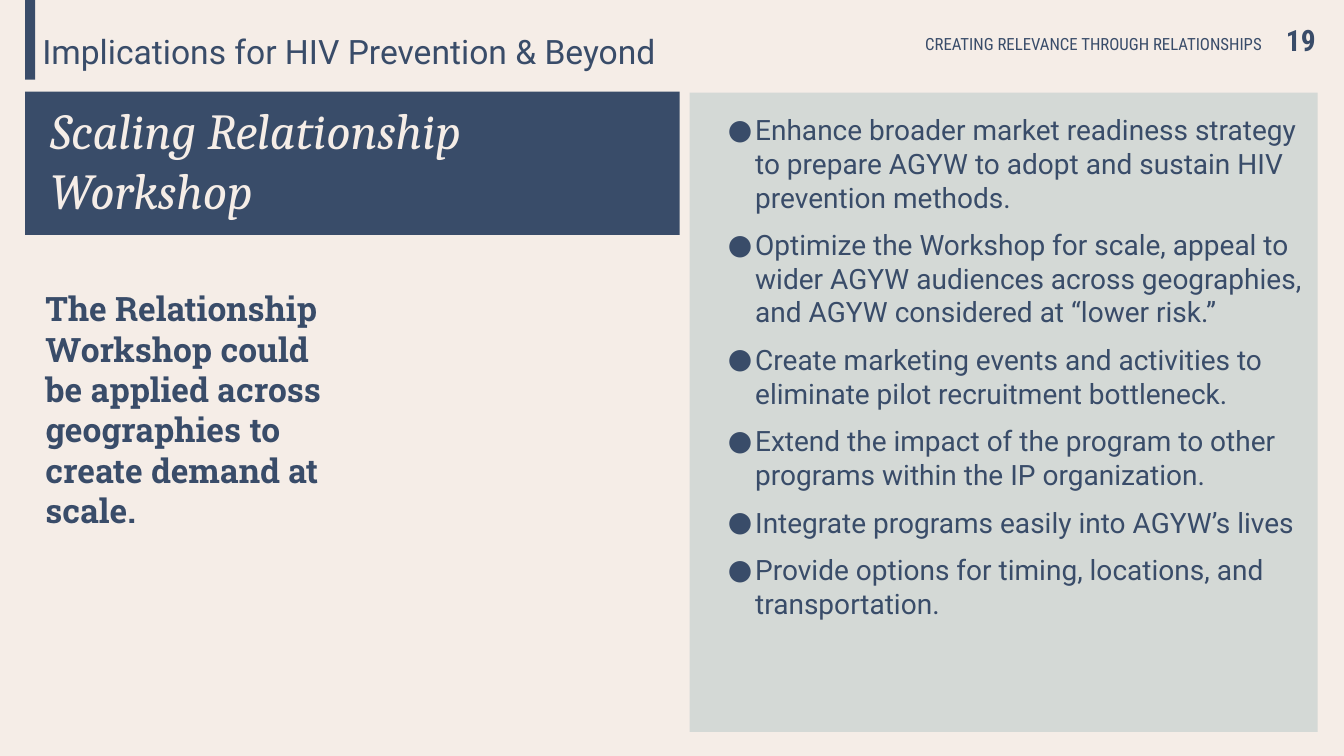
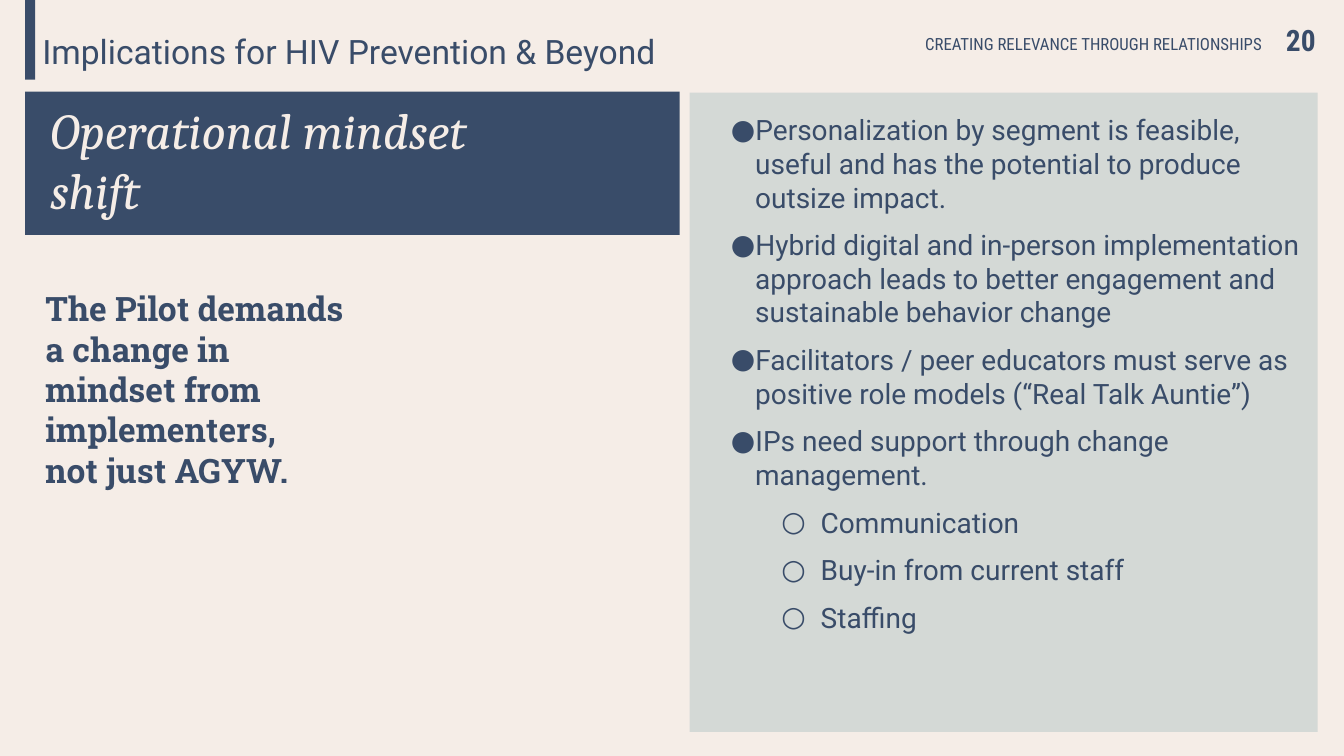
from dataclasses import dataclass

from lxml import etree
from pptx import Presentation
from pptx.dml.color import RGBColor
from pptx.enum import shapes, text
from pptx.oxml import ns
from pptx.util import Inches, Pt


@dataclass(frozen=True)
class Theme:
    navy: RGBColor = RGBColor.from_string("394C69")
    cream: RGBColor = RGBColor.from_string("F5EDE7")
    sage: RGBColor = RGBColor.from_string("D4D9D6")
    sans: str = "Roboto"
    narrow: str = "Roboto Condensed"
    slab: str = "Roboto Slab"
    serif: str = "Cambria"
    title: int = 36
    lead: int = 24
    body: int = 20
    page: int = 21
    label: int = 12
    gap: int = 10


T = Theme()
SECTION = "Implications for HIV Prevention & Beyond"
LABEL = "CREATING RELEVANCE THROUGH RELATIONSHIPS"

# Each bullet is a (level, text) pair; hang is the first-level bullet offset
SLIDES = [
    dict(
        page=19,
        title="Scaling Relationship Workshop",
        lead=["The Relationship Workshop could be applied across "
              "geographies to create demand at scale."],
        hang=0.27,
        points=[
            (0, "Enhance broader market readiness strategy to prepare AGYW "
                "to adopt and sustain HIV prevention methods."),
            (0, "Optimize the Workshop for scale, appeal to wider AGYW "
                "audiences across geographies, and AGYW considered at "
                "“lower risk.”"),
            (0, "Create marketing events and activities to eliminate pilot "
                "recruitment bottleneck."),
            (0, "Extend the impact of the program to other programs within "
                "the IP organization."),
            (0, "Integrate programs easily into AGYW’s lives"),
            (0, "Provide options for timing, locations, and transportation."),
        ],
    ),
    dict(
        page=20,
        title="Operational mindset shift",
        lead=["The Pilot demands a change in mindset from implementers,",
              "not just AGYW."],
        hang=0.24,
        points=[
            (0, "Personalization by segment is feasible, useful and has the "
                "potential to produce outsize impact."),
            (0, "Hybrid digital and in-person implementation approach leads "
                "to better engagement and sustainable behavior change"),
            (0, "Facilitators / peer educators must serve as positive role "
                "models (“Real Talk Auntie”)"),
            (0, "IPs need support through change management."),
            (1, "Communication"),
            (1, "Buy-in from current staff"),
            (1, "Staffing"),
        ],
    ),
]


def style(para, face, size, color=T.navy, bold=False, italic=False,
          align=text.PP_ALIGN.LEFT):
    para.alignment = align
    font = para.font
    font.name, font.size = face, Pt(size)
    font.bold, font.italic = bold, italic
    font.color.rgb = color


def frame(shape, insets=(0, 0, 0, 0), anchor=text.MSO_ANCHOR.TOP):
    """Set wrapping, anchor and left, top, right, bottom insets."""
    body = shape.text_frame
    body.word_wrap = True
    body.auto_size = text.MSO_AUTO_SIZE.NONE
    body.vertical_anchor = anchor
    (body.margin_left, body.margin_top,
     body.margin_right, body.margin_bottom) = map(Inches, insets)
    return body


def paint(shape, color):
    shape.fill.solid()
    shape.fill.fore_color.rgb = color
    shape.line.fill.background()


def block(slide, box, color):
    shape = slide.shapes.add_shape(shapes.MSO_SHAPE.RECTANGLE,
                                   *map(Inches, box))
    shape.shadow.inherit = False
    paint(shape, color)
    return shape


def write(slide, box, lines, face, size, insets=(0, 0, 0, 0),
          anchor=text.MSO_ANCHOR.TOP, **look):
    body = frame(slide.shapes.add_textbox(*map(Inches, box)), insets, anchor)
    body.text = "\n".join(lines)
    for para in body.paragraphs:
        style(para, face, size, **look)


def bullet(para, mark, left, hang):
    props = para._p.get_or_add_pPr()
    props.set("marL", str(Inches(left)))
    props.set("indent", str(-Inches(hang)))
    tint = etree.SubElement(props, ns.qn("a:buClr"))
    etree.SubElement(tint, ns.qn("a:srgbClr"), val=str(T.navy))
    etree.SubElement(props, ns.qn("a:buFont"), typeface=T.sans)
    etree.SubElement(props, ns.qn("a:buChar"), char=mark)


def banner(slide, words):
    title = slide.shapes.title
    title.left, title.top, title.width, title.height = map(
        Inches, (0.25, 0.91, 6.49, 1.42))
    paint(title, T.navy)
    body = frame(title, (0.25, 0.07, 1.27, 0))
    body.text = words
    style(body.paragraphs[0], T.serif, T.title, T.cream, italic=True)


def header(slide, page):
    block(slide, (0.25, 0, 0.1, 0.79), T.navy)
    write(slide, (0.42, 0.31, 6.33, 0.61), [SECTION], T.sans, T.lead)
    side = dict(anchor=text.MSO_ANCHOR.MIDDLE, align=text.PP_ALIGN.RIGHT)
    write(slide, (6.84, 0.22, 5.68, 0.43), [LABEL], T.narrow, T.label, **side)
    write(slide, (12.55, 0.18, 0.5, 0.43), [str(page)], T.narrow, T.page,
          bold=True, **side)


def panel(slide, points, hang):
    levels = [("●", 0.35, hang), ("○", 1, 0.39)]
    body = frame(block(slide, (6.84, 0.92, 6.23, 6.34), T.sage),
                 (0.3, 0.2, 0, 0))
    body.text = "\n".join(words for _, words in points)
    for i, (para, (level, _)) in enumerate(zip(body.paragraphs, points)):
        para.level = level
        if i:
            para.space_before = Pt(T.gap)
        bullet(para, *levels[level])
        style(para, T.sans, T.body)


def main():
    deck = Presentation()
    deck.slide_width, deck.slide_height = Inches(13.33), Inches(7.5)

    # Shared background
    back = deck.slide_master.background.fill
    back.solid()
    back.fore_color.rgb = T.cream

    for item in SLIDES:
        slide = deck.slides.add_slide(deck.slide_layouts[5])
        banner(slide, item["title"])
        header(slide, item["page"])
        write(slide, (0.25, 2.76, 3.2, 4.49), item["lead"], T.slab, T.lead,
              (0.2, 0.1, 0, 0), bold=True)
        panel(slide, item["points"], item["hang"])

    deck.save("out.pptx")


if __name__ == "__main__":
    main()
